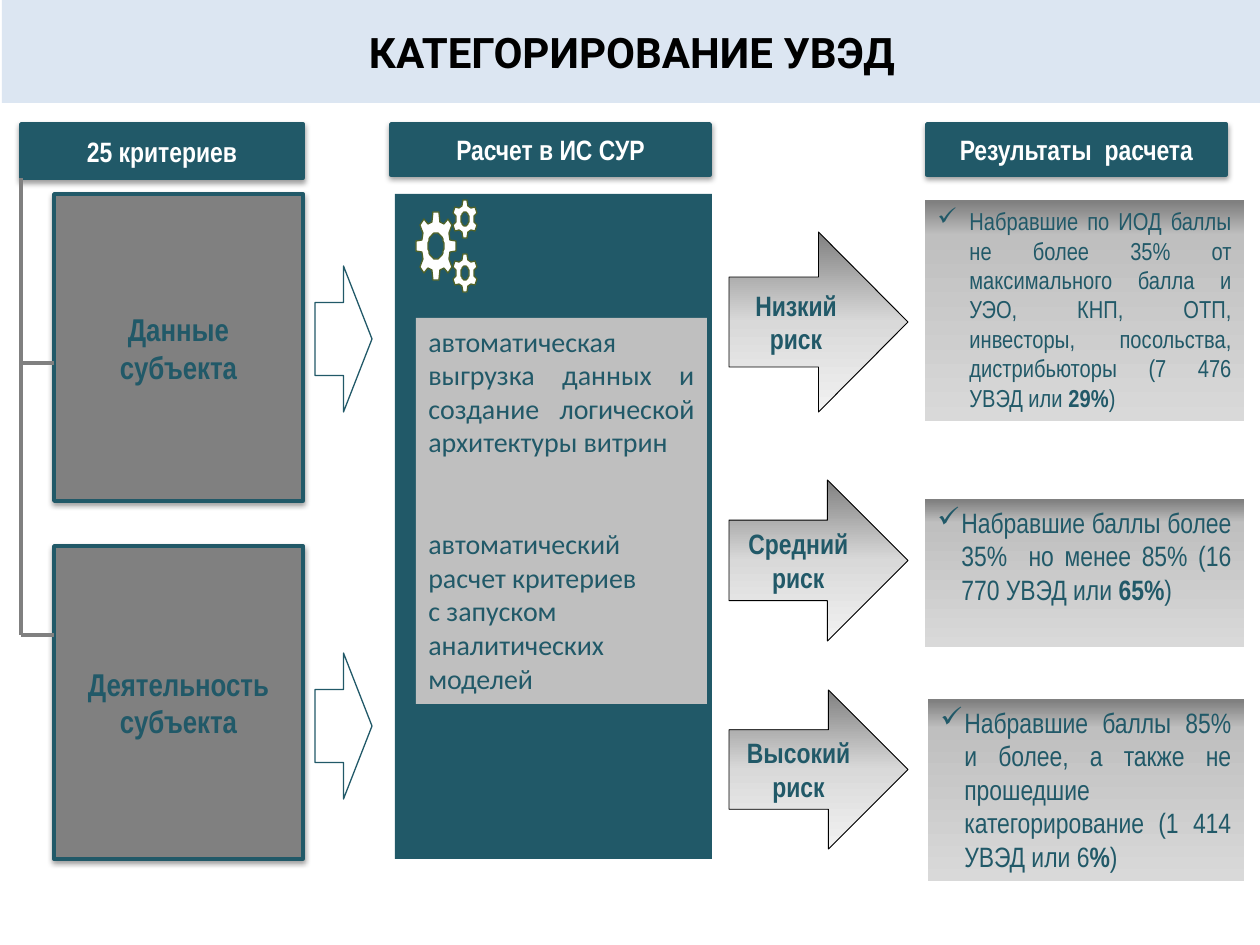
from math import cos, pi, sin

from lxml.etree import SubElement
from pptx import Presentation
from pptx.dml.color import RGBColor
from pptx.enum.shapes import MSO_CONNECTOR, MSO_SHAPE
from pptx.enum.text import MSO_ANCHOR, PP_ALIGN
from pptx.oxml.ns import qn
from pptx.util import Emu, Pt

SCALE = 914400 / 126
COLORS = {
    "teal": "215968", "gray": "808080", "panel": "BFBFBF", "white": "FFFFFF",
    "black": "000000", "banner": "DCE6F2", "olive": "4F6228",
}
ARROW_STOPS = [(0, "A6A6A6"), (0, "808080"), (50, "D9D9D9"), (100, "F2F2F2")]
RESULT_STOPS = [(0, "D9D9D9"), (0, "808080"), (1, "808080"), (16, "BFBFBF"), (100, "D9D9D9")]
NARROW = "Arial Narrow"


def px(value):
    return Emu(round(value * SCALE))


def color(name):
    return RGBColor.from_string(COLORS[name])


def style(shape, fill=None, line=None, width=0.75):
    shape.shadow.inherit = False
    if fill:
        shape.fill.solid()
        shape.fill.fore_color.rgb = color(fill)
    else:
        shape.fill.background()
    if line:
        shape.line.color.rgb = color(line)
        shape.line.width = Pt(width)
    else:
        shape.line.fill.background()


def add_block(page, bounds, fill=None, line=None, width=0.75, preset=MSO_SHAPE.RECTANGLE):
    shape = page.shapes.add_shape(preset, *map(px, bounds))
    style(shape, fill, line, width)
    return shape


def set_gradient(shape, stops):
    """Fill from top to bottom with (percent, colour) stops."""
    shape.fill.gradient()
    shape.fill.gradient_angle = 270
    stop_list = shape.element.spPr.find(".//" + qn("a:gsLst"))
    stop_list.clear()
    for percent, value in stops:
        stop = SubElement(stop_list, qn("a:gs"), pos=str(percent * 1000))
        SubElement(stop, qn("a:srgbClr"), val=value)


def add_shadow(shape):
    effects = shape.element.spPr.find(qn("a:effectLst"))
    shadow = SubElement(effects, qn("a:outerShdw"), blurRad="40000", dist="20000",
                        dir="5400000", rotWithShape="0")
    tint = SubElement(shadow, qn("a:srgbClr"), val=COLORS["black"])
    SubElement(tint, qn("a:alpha"), val="38000")


def write(shape, paragraphs, size, font=NARROW, ink="teal", anchor=MSO_ANCHOR.MIDDLE):
    """Write paragraphs, each an alignment and a list of (text, bold) runs."""
    frame = shape.text_frame
    frame.word_wrap = True
    frame.vertical_anchor = anchor
    for index, (alignment, runs) in enumerate(paragraphs):
        para = frame.add_paragraph() if index else frame.paragraphs[0]
        para.alignment = alignment
        for text, bold in runs:
            span = para.add_run()
            span.text = text
            span.font.name = font
            span.font.size = Pt(size)
            span.font.bold = bold
            span.font.color.rgb = color(ink)
    return frame.paragraphs


def write_label(shape, text, size, font=NARROW, ink="teal"):
    write(shape, [(PP_ALIGN.CENTER, [(text, True)])], size, font, ink)


def add_header(page, bounds, text):
    box = add_block(page, bounds, "teal", "teal", 2)
    add_shadow(box)
    write_label(box, text, 16, ink="white")


def add_subject(page, top, height, text):
    box = add_block(page, (54, top, 249, height), "gray", "teal", 2)
    add_shadow(box)
    write_label(box, text, 18)


def add_risk(page, top, height, text):
    arrow = add_block(page, (729, top, 179, height), line="black", width=0.5,
                      preset=MSO_SHAPE.RIGHT_ARROW)
    set_gradient(arrow, ARROW_STOPS)
    write_label(arrow, text, 16)


def add_result(page, bounds, runs, size, indent):
    box = add_block(page, bounds)
    set_gradient(box, RESULT_STOPS)
    para = write(box, [(PP_ALIGN.JUSTIFY, runs)], size, anchor=MSO_ANCHOR.TOP)[0]
    props = para._p.get_or_add_pPr()
    props.set("marL", str(px(indent)))
    props.set("indent", str(-px(indent)))
    SubElement(props, qn("a:buChar"), char="✓")


def add_process(page):
    add_block(page, (395, 194, 317, 665), "teal")
    box = add_block(page, (416, 318, 291, 386), "panel")
    paragraphs = write(box, [
        (PP_ALIGN.JUSTIFY, [("автоматическая выгрузка данных и создание логической "
                             "архитектуры витрин", False)]),
        (PP_ALIGN.LEFT, [("автоматический расчет критериев", False)]),
        (PP_ALIGN.LEFT, [("с запуском аналитических моделей", False)]),
    ], 16, "Calibri", anchor=MSO_ANCHOR.TOP)
    paragraphs[1].space_before = Pt(39)


def ellipse_point(center, radii, angle):
    return center[0] + radii[0] * cos(angle), center[1] + radii[1] * sin(angle)


def gear_outlines(center, radii, hole, teeth):
    """Return the toothed rim and the round hole as point lists."""
    step = 2 * pi / teeth
    profile = [(-0.32, 0.74), (-0.17, 1), (0.17, 1), (0.32, 0.74)]
    rim = [ellipse_point(center, [r * reach for r in radii], (tooth + shift) * step - pi / 2)
           for tooth in range(teeth) for shift, reach in profile]
    opening = [ellipse_point(center, hole, -2 * pi * k / 32) for k in range(32)]
    return [rim, opening]


def add_gears(page):
    outlines = gear_outlines((436, 246), (20, 34), (8, 13), 8)
    for middle in (219, 273):
        outlines += gear_outlines((465, middle), (13, 19), (4, 7), 6)
    builder = page.shapes.build_freeform(*outlines[0][0], scale=SCALE)
    for index, points in enumerate(outlines):
        if index:
            builder.move_to(*points[0])
        builder.add_line_segments(points[1:], close=True)
    style(builder.convert_to_shape(), "white", "olive")


def add_bracket_line(page, start, end):
    line = page.shapes.add_connector(MSO_CONNECTOR.STRAIGHT, *map(px, start + end))
    line.line.color.rgb = color("gray")
    line.line.width = Pt(2)
    SubElement(line._element.spPr, qn("a:effectLst"))


def main():
    deck = Presentation()
    deck.slide_width, deck.slide_height = px(1260), px(945)
    page = deck.slides.add_slide(deck.slide_layouts[6])

    banner = add_block(page, (2, 0, 1260, 103), "banner")
    write_label(banner, "КАТЕГОРИРОВАНИЕ УВЭД", 24, "Roboto", "black")

    add_header(page, (21, 124, 282, 54), "25 критериев")
    add_header(page, (391, 124, 319, 51), "Расчет в ИС СУР")
    add_header(page, (927, 124, 299, 51), "Результаты  расчета")

    add_subject(page, 194, 307, "Данные субъекта")
    add_subject(page, 546, 313, "Деятельность субъекта")
    for top in (266, 653):
        add_block(page, (315, top, 57, 146), line="teal", preset=MSO_SHAPE.RIGHT_ARROW)

    add_process(page)
    add_gears(page)

    add_risk(page, 232, 180, "Низкий риск")
    add_risk(page, 480, 161, "Средний риск")
    add_risk(page, 690, 159, "Высокий риск")

    add_result(page, (925, 200, 319, 221), [
        ("Набравшие по ИОД баллы не более 35% от максимального балла и УЭО, КНП, ОТП, "
         "инвесторы, посольства, дистрибьюторы (7 476 УВЭД или ", False),
        ("29%", True), (")", False)], 14, 32)
    add_result(page, (925, 499, 319, 148), [
        ("Набравшие баллы более 35%  но менее 85% (16 770 УВЭД или ", False),
        ("65%", True), (")", False)], 16, 24)
    add_result(page, (928, 699, 316, 182), [
        ("Набравшие баллы 85% и более, а также не прошедшие категорирование "
         "(1 414 УВЭД или 6", False),
        ("%", True), (")", False)], 16, 24)

    add_bracket_line(page, (21, 178), (21, 635))
    for level in (363, 635):
        add_bracket_line(page, (21, level), (54, level))

    deck.save("out.pptx")


if __name__ == "__main__":
    main()
